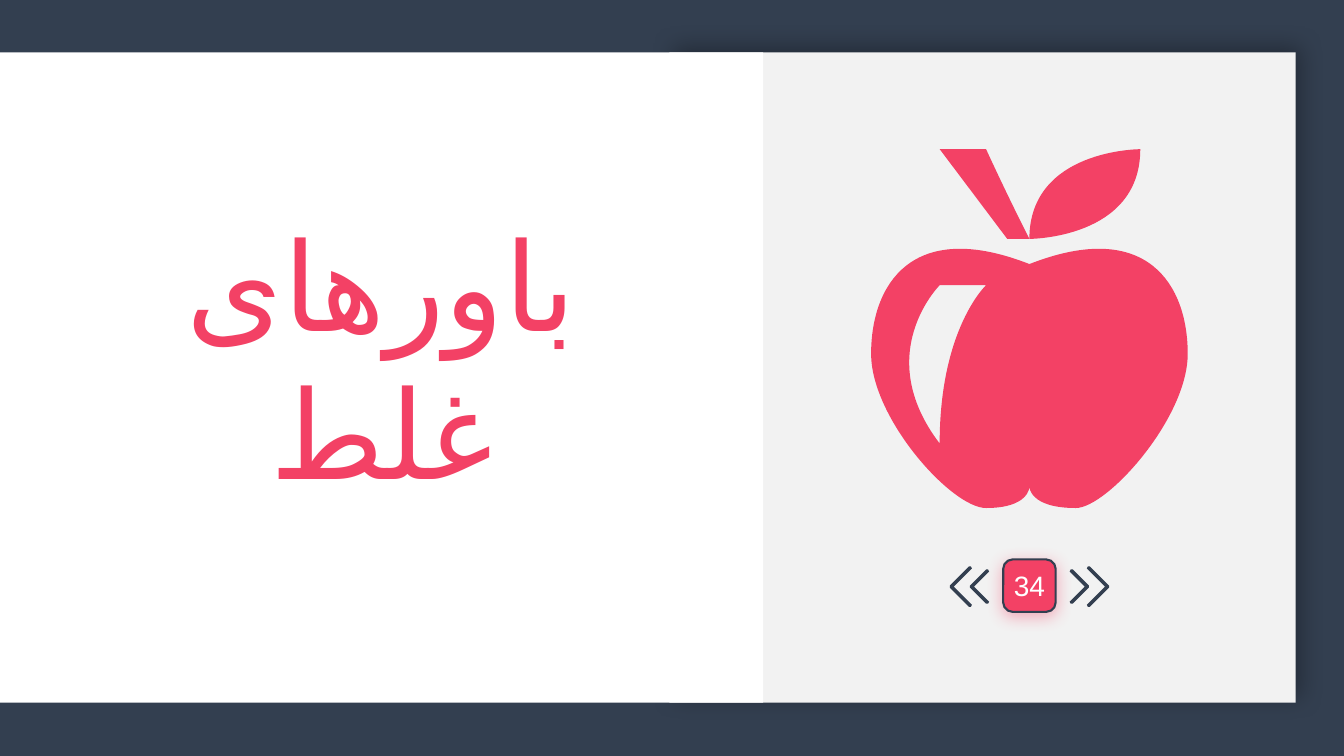
from dataclasses import dataclass
from typing import Optional

from lxml import etree
from pptx import Presentation
from pptx import util as u
from pptx.dml.color import RGBColor
from pptx.enum import shapes, text
from pptx.oxml.ns import qn

COLORS = {"navy": "333F50", "pink": "F34165", "grey": "F2F2F2", "white": "FFFFFF", "black": "000000"}
AXIS = 10.21  # vertical axis shared by the apple and the page marker

Point = tuple[float, float]


@dataclass
class Shadow:
    color: str
    alpha: int
    blur: float
    dist: float
    angle: int


@dataclass
class Box:
    left: float
    top: float
    width: float
    height: float
    fill: str
    kind: shapes.MSO_SHAPE = shapes.MSO_SHAPE.RECTANGLE
    shadow: Optional[Shadow] = None


@dataclass
class Label:
    words: str
    size: int
    color: str
    frame: dict


@dataclass
class Contour:
    """A start point, then straight (one point) and cubic (three points) segments."""
    start: Point
    segments: list[tuple[Point, ...]]


def rgb(name: str) -> RGBColor:
    return RGBColor.from_string(COLORS[name])


def paint(sp, fill: str) -> None:
    sp.shadow.inherit = False
    sp.fill.solid()
    sp.fill.fore_color.rgb = rgb(fill)
    sp.line.fill.background()


def add_shadow(sp, shadow: Shadow) -> None:
    effects = sp._element.spPr.find(qn("a:effectLst"))
    outer = etree.SubElement(effects, qn("a:outerShdw"), blurRad=str(u.Pt(shadow.blur)),
                             dist=str(u.Pt(shadow.dist)), dir=str(shadow.angle * 60000),
                             algn="ctr", rotWithShape="0")
    color = etree.SubElement(outer, qn("a:srgbClr"), val=COLORS[shadow.color])
    etree.SubElement(color, qn("a:alpha"), val=str(shadow.alpha * 1000))


def add_box(s, box: Box):
    sp = s.shapes.add_shape(box.kind, *map(u.Inches, (box.left, box.top, box.width, box.height)))
    paint(sp, box.fill)
    if box.shadow:
        add_shadow(sp, box.shadow)
    return sp


def write(sp, label: Label):
    tf = sp.text_frame
    for name, value in label.frame.items():
        setattr(tf, name, value)
    p = tf.paragraphs[0]
    p.alignment = text.PP_ALIGN.CENTER
    r = p.add_run()
    r.text = label.words
    for name, value in {"name": "Arial", "size": u.Pt(label.size)}.items():
        setattr(r.font, name, value)
    r.font.color.rgb = rgb(label.color)
    return p, r


def emu(point: Point) -> Point:
    return u.Inches(point[0]), u.Inches(point[1])


def add_outline(s, contours: list[Contour], fill: str) -> None:
    builder = s.shapes.build_freeform(*emu(contours[0].start), scale=1.0)
    for i, contour in enumerate(contours):
        if i:
            builder.move_to(*emu(contour.start))
        builder.add_line_segments([emu(pt) for seg in contour.segments for pt in seg], close=True)
    sp = builder.convert_to_shape()
    paint(sp, fill)

    # Merge each three points of a cubic segment into one curve
    lines = iter(list(sp._element.iter(qn("a:lnTo"))))
    for seg in (seg for contour in contours for seg in contour.segments):
        first, *rest = [next(lines) for _ in seg]
        if rest:
            first.addprevious(curve := etree.Element(qn("a:cubicBezTo")))
            for line in (first, *rest):
                curve.append(line[0])
                line.getparent().remove(line)


def chevron(left: float, tip: float, half: float, thick: float) -> list[Point]:
    """A thin right-pointing angle with blunted ends."""
    mid, cut = 5.82, 0.01
    upper = [(left, mid - half + 2 * cut), (left + cut, mid - half),
             (left + thick, mid - half), (tip, mid - cut)]
    lower = [(x, 2 * mid - y) for x, y in reversed(upper)]
    return upper + lower + [(tip - thick - cut, mid)]


def polygon(points: list[Point]) -> Contour:
    return Contour(points[0], [(pt,) for pt in points[1:]])


PANELS = [
    Box(6.64, 0.52, 6.21, 6.45, "grey", shadow=Shadow("black", 30, 17, 5, 315)),
    Box(0, 0.52, 7.57, 6.45, "white"),
]
BADGE = Box(9.95, 5.55, 0.52, 0.52, "pink", shapes.MSO_SHAPE.ROUNDED_RECTANGLE,
            Shadow("pink", 41, 12, 3, 90))
TITLE = Label("باورهای غلط", 88, "pink",
              {"word_wrap": True, "auto_size": text.MSO_AUTO_SIZE.SHAPE_TO_FIT_TEXT})
PAGE = Label("34", 20, "white",
             {"margin_left": 0, "margin_right": 0, "vertical_anchor": text.MSO_ANCHOR.MIDDLE})
CHEVRONS = [chevron(10.78, 11, 0.2, 0.03), chevron(10.61, 10.8, 0.17, 0.03)]

BODY = Contour((AXIS, 2.62), [((9.04, 2.16), (8.64, 2.83), (8.64, 3.51)),
                              ((8.64, 4.15), (9.44, 5.04), (9.78, 5.04)),
                              ((AXIS, 5.04), (AXIS, 4.83), (AXIS, 4.83)),
                              ((AXIS, 4.83), (AXIS, 5.04), (10.67, 5.04)),
                              ((10.98, 5.04), (11.78, 4.15), (11.78, 3.51)),
                              ((11.78, 2.83), (11.38, 2.16), (AXIS, 2.62))])
SHINE = Contour((9.32, 4.4), [((8.64, 3.51), (9.32, 2.83), (9.32, 2.83)), ((9.78, 2.83),),
                              ((9.78, 2.83), (9.32, 3.26), (9.32, 4.4))])
STEM = Contour((AXIS, 2.37), [((9.99, 1.94), (9.78, 1.48), (9.78, 1.48)),
                              ((9.32, 1.48),), ((9.99, 2.37),)])
LEAF = Contour((11.31, 1.48), [((11.31, 1.48), (AXIS, 1.48), (AXIS, 2.37)),
                               ((AXIS, 2.37), (11.31, 2.37), (11.31, 1.48))])


def main() -> None:
    prs = Presentation()
    prs.slide_width, prs.slide_height = u.Inches(13.33), u.Inches(7.5)
    s = prs.slides.add_slide(prs.slide_layouts[6])
    s.background.fill.solid()
    s.background.fill.fore_color.rgb = rgb("navy")

    # Panels
    for panel in PANELS:
        add_box(s, panel)

    # Title, set right to left
    sp = s.shapes.add_textbox(*map(u.Inches, (0.68, 2.02, 6.21, 1.58)))
    p, r = write(sp, TITLE)
    p._p.get_or_add_pPr().set("rtl", "1")
    r._r.get_or_add_rPr().set("lang", "fa-IR")
    etree.SubElement(r._r.rPr, qn("a:cs"), typeface="Arial")

    # Page marker with mirrored chevrons
    badge = add_box(s, BADGE)
    badge.adjustments[0] = 0.18
    badge.line.color.rgb = rgb("navy")
    badge.line.width = u.Pt(1.5)
    write(badge, PAGE)
    add_outline(s, [polygon(c) for c in CHEVRONS], "navy")
    add_outline(s, [polygon([(2 * AXIS - x, y) for x, y in c]) for c in CHEVRONS], "navy")

    # Apple
    for contours in ([BODY, SHINE], [STEM], [LEAF]):
        add_outline(s, contours, "pink")

    prs.save("out.pptx")


if __name__ == "__main__":
    main()
